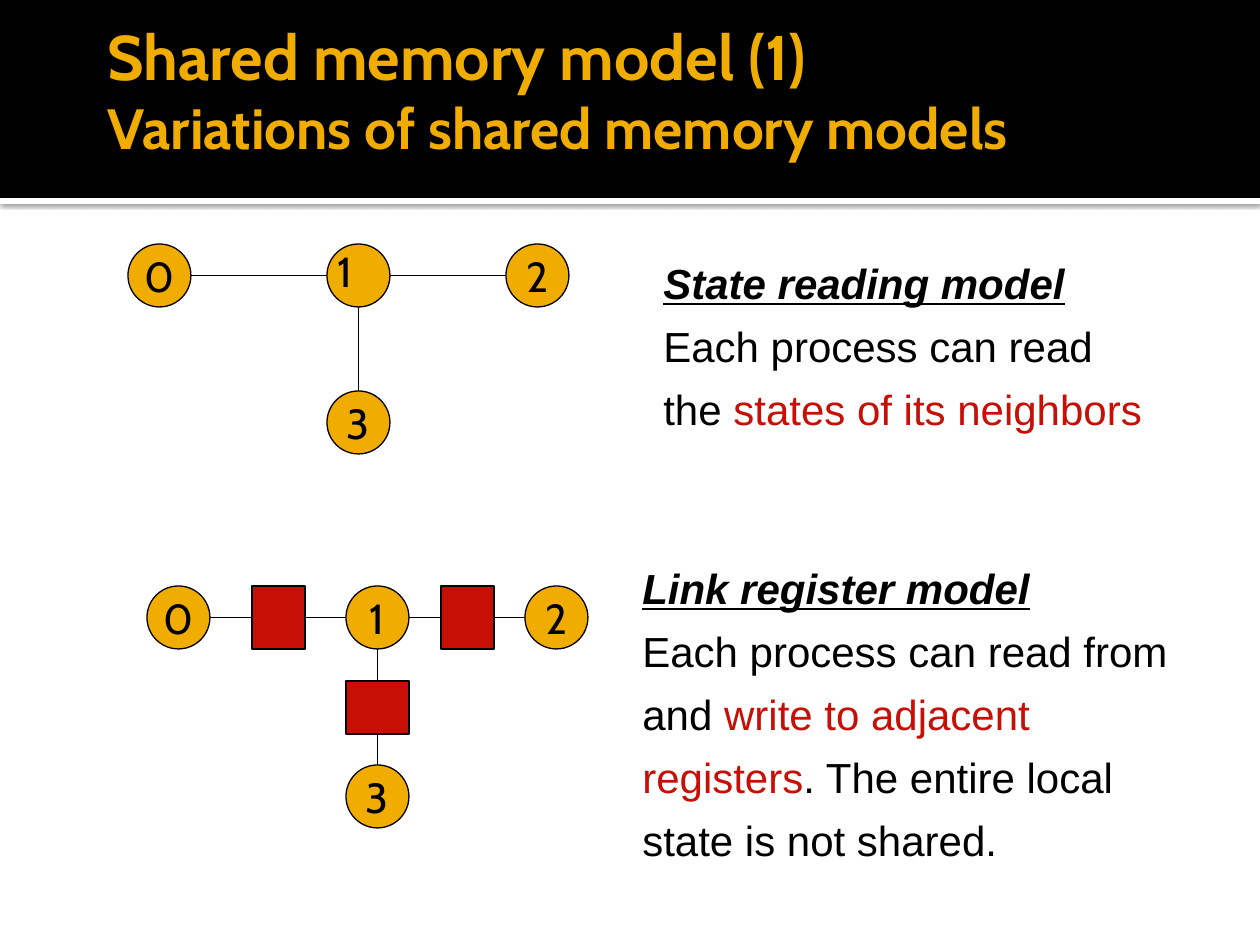
import pptx
import pptx.dml.color
import pptx.enum.shapes
import pptx.enum.text
import pptx.oxml
import pptx.oxml.ns
import pptx.util
import lxml.etree

RGBColor = pptx.dml.color.RGBColor
Shape = pptx.enum.shapes.MSO_SHAPE
Anchor = pptx.enum.text.MSO_ANCHOR
Align = pptx.enum.text.PP_ALIGN
AutoSize = pptx.enum.text.MSO_AUTO_SIZE

BLACK = RGBColor(0, 0, 0)
WHITE = RGBColor(255, 255, 255)
GOLD = RGBColor(0xF0, 0xAD, 0x00)
RED = RGBColor(0xC7, 0x0F, 0x05)

PX_PER_INCH = 126
NODE = 63
RADIUS = NODE / 2
HUB = 199
FAR = 378


def px(length):
    return pptx.util.Emu(round(length * 914400 / PX_PER_INCH))


def set_font(font, size, name, color):
    font.size = pptx.util.Pt(size)
    font.name = name
    font.color.rgb = color


def add_block(page, kind, left, top, width, height, fill, outlined=True):
    block = page.shapes.add_shape(kind, px(left), px(top), px(width), px(height))
    block.fill.solid()
    block.fill.fore_color.rgb = fill
    if outlined:
        block.line.color.rgb = BLACK
        block.line.width = pptx.util.Pt(0.75)
    else:
        block.line.fill.background()
    block.shadow.inherit = False
    return block


def add_header(page, left, top, width, height):
    stripe = add_block(page, Shape.RECTANGLE, left, top + height, width, 6, WHITE, False)
    effects = stripe.element.spPr.find(pptx.oxml.ns.qn("a:effectLst"))
    effects.append(pptx.oxml.parse_xml(
        f'<a:outerShdw {pptx.oxml.ns.nsdecls("a")} blurRad="31750" dist="10160" dir="5400000" '
        'rotWithShape="0"><a:srgbClr val="000000"><a:alpha val="60000"/></a:srgbClr></a:outerShdw>'))
    band = add_block(page, Shape.RECTANGLE, left, top, width, height, BLACK, False)

    title = page.shapes.title
    band.element.addnext(title.element)
    title.left, title.top = px(left + 95), px(top + 10)
    title.width, title.height = px(1071), px(158)
    frame = title.text_frame
    frame.auto_size = AutoSize.NONE
    frame.word_wrap = True
    frame.vertical_anchor = Anchor.MIDDLE
    frame.margin_right = pptx.util.Inches(0.05)
    para = frame.paragraphs[0]
    para.alignment = Align.LEFT
    para.font.bold = True
    set_font(para.font, 36, "Cabin", GOLD)
    para.add_run().text = "Shared memory model (1)"
    para.add_line_break()
    subtitle = para.add_run()
    subtitle.text = "Variations of shared memory models"
    subtitle.font.size = pptx.util.Pt(32.4)


def add_label(frame, text):
    frame.word_wrap = False
    para = frame.paragraphs[0]
    para.text = text
    set_font(para.font, 24, "Cabin", BLACK)
    return para


def add_node(page, left, top, text):
    node = add_block(page, Shape.OVAL, left, top, NODE, NODE, GOLD)
    if text:
        node.text_frame.vertical_anchor = Anchor.MIDDLE
        add_label(node.text_frame, text).alignment = Align.CENTER


def add_link(page, x1, y1, x2, y2):
    link = page.shapes.add_connector(
        pptx.enum.shapes.MSO_CONNECTOR.STRAIGHT, px(x1), px(y1), px(x2), px(y2))
    link.line.color.rgb = BLACK
    link.line.width = pptx.util.Pt(0.75)
    lxml.etree.SubElement(link.element.spPr, pptx.oxml.ns.qn("a:effectLst"))


def add_network(page, left, top, drop, hub_text):
    row = top + RADIUS
    column = left + HUB + RADIUS
    add_link(page, left + NODE, row, left + HUB, row)
    add_link(page, left + HUB + NODE, row, left + FAR, row)
    add_link(page, column, top + NODE, column, top + drop)
    for x, y, text in ((0, 0, "0"), (HUB, 0, hub_text), (FAR, 0, "2"), (HUB, drop, "3")):
        add_node(page, left + x, top + y, text)


def add_state_network(page, left, top):
    add_network(page, left, top, 147, "")
    label = page.shapes.add_textbox(px(left + 197), px(top - 5), px(44), px(64))
    add_label(label.text_frame, "1")


def add_register_network(page, left, top):
    add_network(page, left, top, 179, "1")
    for x, y, width, height in ((105, 0, 53, 63), (294, 0, 53, 63), (HUB, 95, 63, 53)):
        add_block(page, Shape.RECTANGLE, left + x, top + y, width, height, RED)


def add_description(page, left, top, width, height, heading, lines):
    box = page.shapes.add_textbox(px(left), px(top), px(width), px(height))
    frame = box.text_frame
    frame.word_wrap = True
    for index, parts in enumerate([[(heading, BLACK)], *lines]):
        para = frame.add_paragraph() if index else frame.paragraphs[0]
        para.line_spacing = 1.25
        set_font(para.font, 24, "Arial", BLACK)
        if index == 0:
            para.font.bold = para.font.italic = para.font.underline = True
        for text, color in parts:
            span = para.add_run()
            span.text = text
            if color != BLACK:
                span.font.color.rgb = color


def main():
    deck = pptx.Presentation()
    deck.slide_width, deck.slide_height = px(1260), px(945)
    page = deck.slides.add_slide(deck.slide_layouts[5])

    add_header(page, 0, 0, 1260, 198)
    add_state_network(page, 128, 244)
    add_description(page, 651, 239, 557, 202, "State reading model", [
        [("Each process can read", BLACK)],
        [("the ", BLACK), ("states of its neighbors", RED)],
    ])
    add_register_network(page, 147, 586)
    add_description(page, 630, 544, 557, 328, "Link register model", [
        [("Each process can read from", BLACK)],
        [("and ", BLACK), ("write to adjacent registers", RED),
         (". The entire local state is not shared.", BLACK)],
    ])
    deck.save("out.pptx")


if __name__ == "__main__":
    main()
